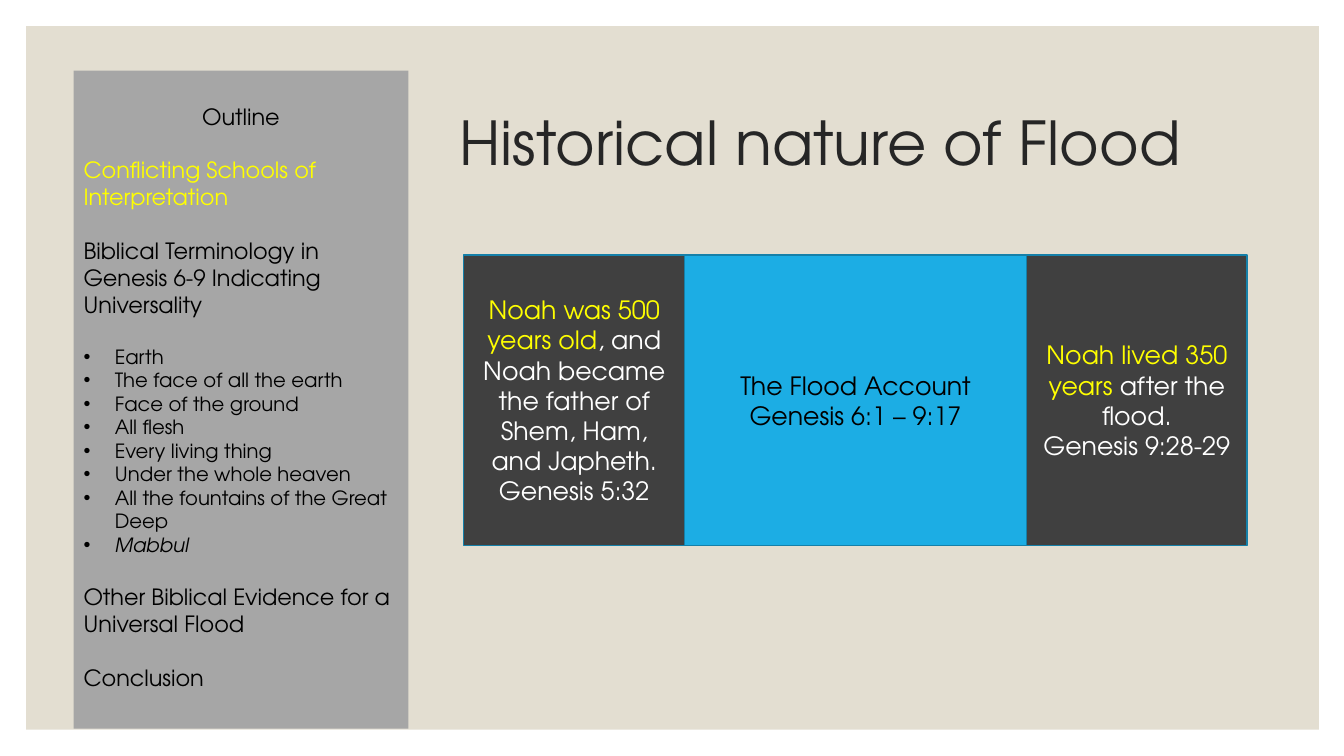
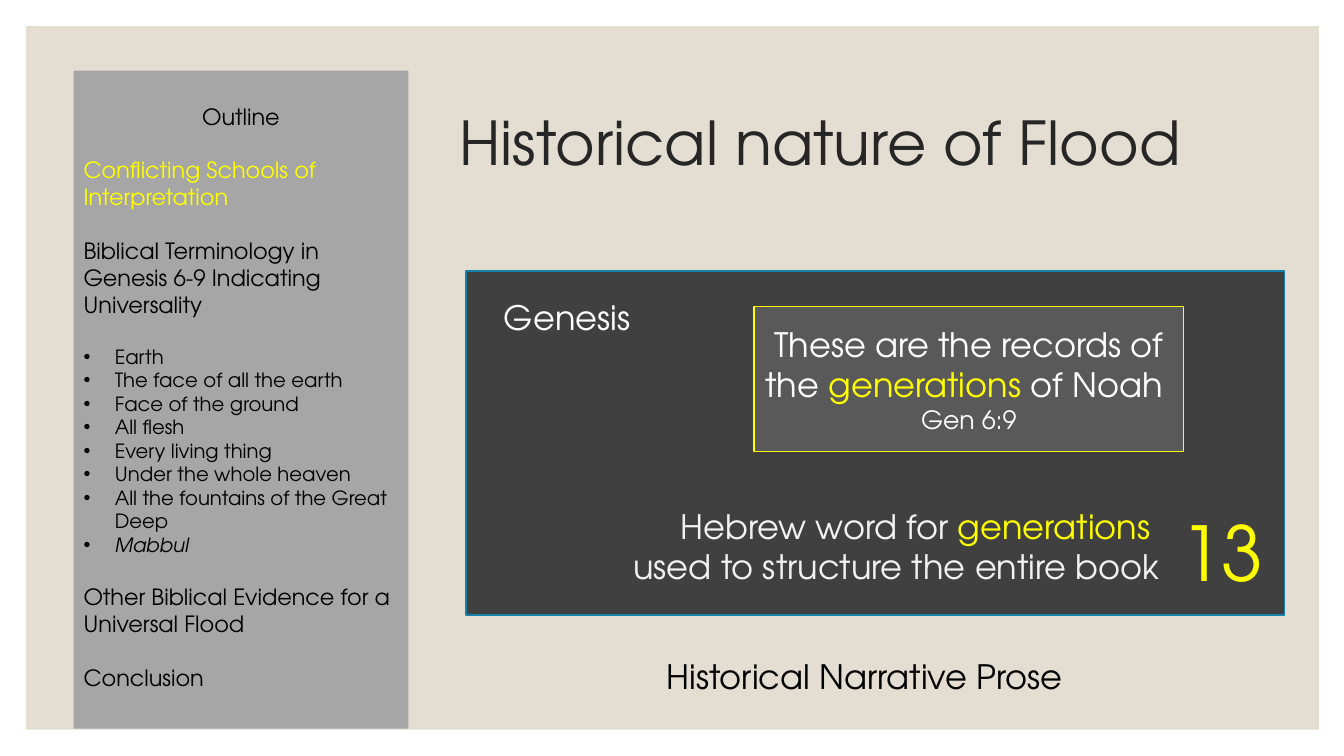
import pptx
import pptx.dml.color
import pptx.enum.shapes
import pptx.enum.text
import pptx.oxml
import pptx.oxml.ns
import pptx.util

PIXEL = 9144
FONT = "TeX Gyre Adventor"
COLOURS = {
    "page": "E3DED1",
    "title": "262626",
    "outline": "A6A6A6",
    "dark": "404040",
    "quote": "595959",
    "blue": "1CADE4",
    "border": "1580A9",
    "yellow": "FFFF00",
    "white": "FFFFFF",
    "pale": "F2F2F2",
    "black": "000000",
}
ALIGN = pptx.enum.text.PP_ALIGN
ANCHOR = pptx.enum.text.MSO_ANCHOR
OUTLINE_GAP = 19.2
OUTLINE_TERMS = [
    "Earth",
    "The face of all the earth",
    "Face of the ground",
    "All flesh",
    "Every living thing",
    "Under the whole heaven",
    "All the fountains of the Great Deep",
    "Mabbul",
]


def px(length):
    return pptx.util.Emu(length * PIXEL)


def colour_of(name):
    return pptx.dml.color.RGBColor.from_string(COLOURS[name])


def add_box(slide, left, top, width, height, fill, line=None):
    shape = slide.shapes.add_shape(
        pptx.enum.shapes.MSO_SHAPE.RECTANGLE, px(left), px(top), px(width), px(height))
    shape.shadow.inherit = False
    shape.fill.solid()
    shape.fill.fore_color.rgb = colour_of(fill)
    if line:
        shape.line.color.rgb = colour_of(line)
        shape.line.width = pptx.util.Pt(1)
    else:
        shape.line.fill.background()
    shape.text_frame.word_wrap = True
    return shape


def add_frame(slide, left, top, width, height, wrap=True, anchor=ANCHOR.TOP):
    frame = slide.shapes.add_textbox(px(left), px(top), px(width), px(height)).text_frame
    frame.word_wrap = wrap
    frame.vertical_anchor = anchor
    return frame


def add_bullet(paragraph, indent):
    properties = paragraph._p.get_or_add_pPr()
    properties.set("marL", str(px(indent)))
    properties.set("indent", str(-px(indent)))
    namespace = pptx.oxml.ns.nsdecls("a")
    for markup in ('<a:buFont %s typeface="Arial"/>', '<a:buChar %s char="•"/>'):
        properties.append(pptx.oxml.parse_xml(markup % namespace))


def write(frame, text, size, colour, align=ALIGN.LEFT, highlight="",
          before=0, line_spacing=1.0, italic=False, bullet=False):
    paragraph = frame.paragraphs[0]
    if paragraph.runs:
        paragraph = frame.add_paragraph()
    paragraph.alignment = align
    paragraph.line_spacing = line_spacing
    paragraph.space_before = pptx.util.Pt(before)
    if bullet:
        add_bullet(paragraph, 31)
    start, match, end = text.partition(highlight) if highlight else (text, "", "")
    for part, part_colour in ((start, colour), (match, "yellow"), (end, colour)):
        if part:
            run = paragraph.add_run()
            run.text = part
            run.font.name = FONT
            run.font.size = pptx.util.Pt(size)
            run.font.italic = italic
            run.font.color.rgb = colour_of(part_colour)


def add_outline(slide, left, top, width, height):
    frame = add_box(slide, left, top, width, height, "outline").text_frame
    frame.vertical_anchor = ANCHOR.TOP
    frame.margin_top = px(32)
    write(frame, "Outline", 16, "black", align=ALIGN.CENTER)
    write(frame, "Conflicting Schools of Interpretation", 16, "yellow", before=OUTLINE_GAP)
    write(frame, "Biblical Terminology in Genesis 6-9 Indicating Universality", 16, "black",
          before=OUTLINE_GAP)
    for index, term in enumerate(OUTLINE_TERMS):
        write(frame, term, 14, "black", bullet=True, italic=term == "Mabbul",
              before=0 if index else OUTLINE_GAP)
    for heading in ("Other Biblical Evidence for a Universal Flood", "Conclusion"):
        write(frame, heading, 16, "black", before=OUTLINE_GAP)


def add_base_slide(presentation, title):
    slide = presentation.slides.add_slide(presentation.slide_layouts[6])
    add_box(slide, 26, 26, 1282, 698, "page")
    add_outline(slide, 73, 70, 332, 653)
    frame = add_frame(slide, 446, 70, 814, 150, anchor=ANCHOR.MIDDLE)
    write(frame, title, 43.2, "title", line_spacing=0.9)
    return slide


def add_timeline(slide, left, top, width, height):
    side = 219
    middle = width - 2 * side
    periods = [
        (0, side, "dark", "white", "Noah was 500 years old",
         ["Noah was 500 years old, and Noah became the father of Shem, Ham, and Japheth.",
          "Genesis 5:32"]),
        (side + middle, side, "dark", "white", "Noah lived 350 years ",
         ["Noah lived 350 years after the flood.", "Genesis 9:28-29"]),
        (side, middle, "blue", "black", "",
         ["The Flood Account", "Genesis 6:1 – 9:17"]),
    ]
    for offset, period_width, fill, colour, highlight, lines in periods:
        shape = add_box(slide, left + offset, top, period_width, height, fill, "border")
        shape.text_frame.vertical_anchor = ANCHOR.MIDDLE
        for line in lines:
            write(shape.text_frame, line, 18, colour, align=ALIGN.CENTER, highlight=highlight)


def add_generations_panel(slide, left, top, width, height):
    add_box(slide, left, top, width, height, "dark", "border")

    quote = add_box(slide, left + 286, top + 35, 426, 144, "quote", "yellow").text_frame
    quote.vertical_anchor = ANCHOR.MIDDLE
    write(quote, "These are the records of the generations of Noah ", 24, "white",
          align=ALIGN.CENTER, highlight="generations")
    write(quote, "Gen 6:9", 18, "white", align=ALIGN.CENTER)

    count = add_frame(slide, left + 698, top + 228, 104, 101, wrap=False)
    write(count, "13", 54, "yellow", align=ALIGN.CENTER)

    usage = add_frame(slide, left + 134, top + 228, 564, 131)
    for line in ("Hebrew word for generations ", "used to structure the entire book"):
        write(usage, line, 24, "pale", align=ALIGN.RIGHT, highlight="generations ")

    book = add_frame(slide, left + 28, top + 21, 202, 50)
    write(book, "Genesis", 24, "white")


def add_conclusion(slide, left, top, width, height):
    frame = add_frame(slide, left, top, width, height)
    write(frame, "Historical Narrative Prose", 24, "black", align=ALIGN.CENTER)


def main():
    presentation = pptx.Presentation()
    presentation.slide_width = pptx.util.Inches(13.33)
    presentation.slide_height = pptx.util.Inches(7.5)
    title = "Historical nature of Flood"

    timeline_slide = add_base_slide(presentation, title)
    add_timeline(timeline_slide, 460, 253, 777, 288)

    generations_slide = add_base_slide(presentation, title)
    add_generations_panel(generations_slide, 462, 269, 812, 341)
    add_conclusion(generations_slide, 555, 646, 605, 50)

    presentation.save("out.pptx")


if __name__ == "__main__":
    main()
